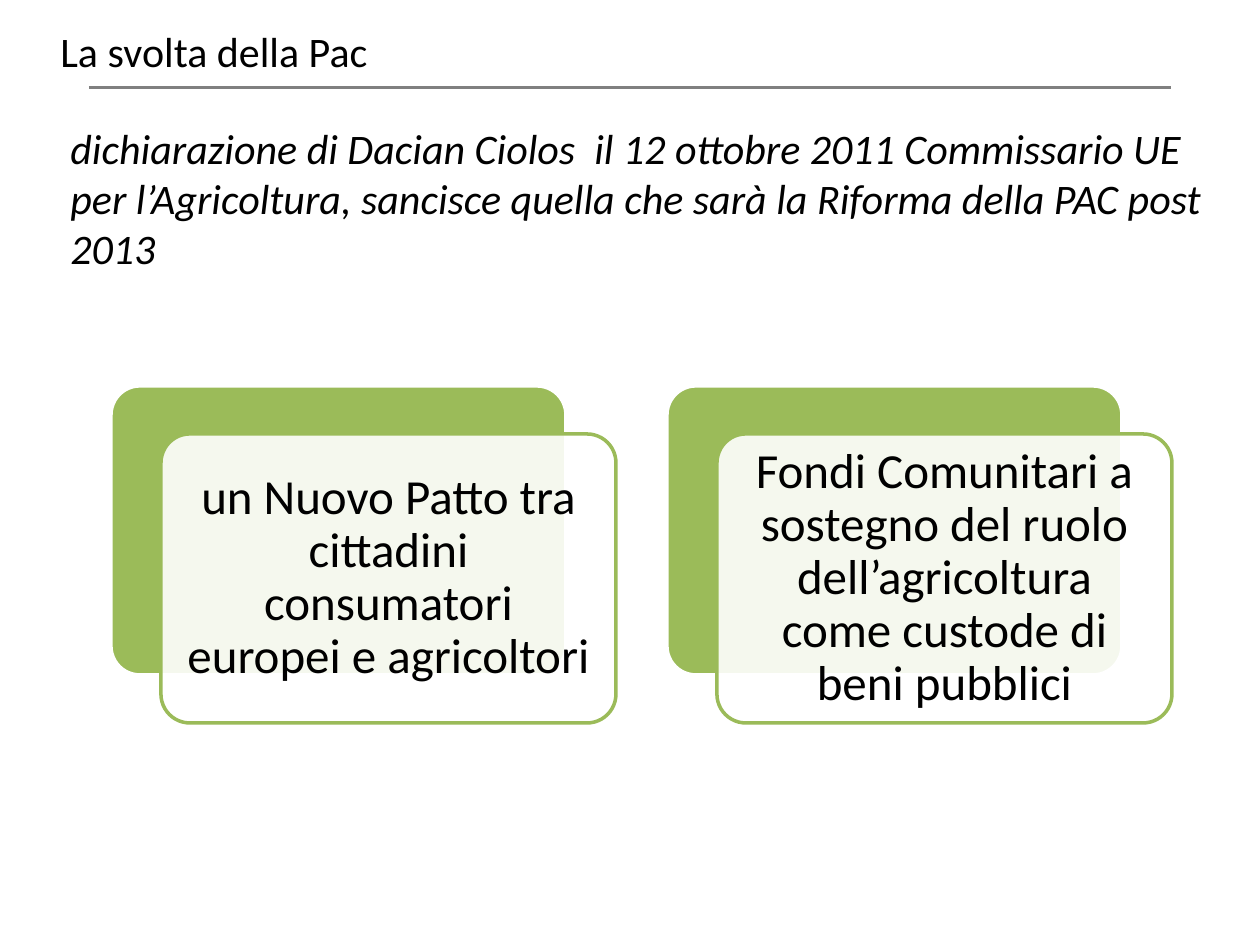
from pptx import Presentation
from pptx import util as u
from pptx.dml.color import RGBColor
from pptx.enum import shapes, text
from pptx.oxml.ns import qn
from lxml import etree

# Content
TITLE = "La svolta della Pac"
INTRO = ("dichiarazione di Dacian Ciolos  il 12 ottobre 2011 Commissario UE "
         "per l’Agricoltura, sancisce quella che sarà la Riforma della PAC post 2013")
CARDS = [
    "un Nuovo Patto tra cittadini consumatori europei e agricoltori",
    "Fondi Comunitari a sostegno del ruolo dell’agricoltura come custode di beni pubblici",
]

# Theme
THEME = {
    "font": "Calibri", "body": 24, "card": 28,
    "ink": RGBColor(0, 0, 0), "rule": RGBColor(0x80, 0x80, 0x80),
    "green": RGBColor(0x9B, 0xBB, 0x59), "white": RGBColor(255, 255, 255),
}

# Layout in px, 126 to the inch
CARD_X, CARD_Y, CARD_W, CARD_H = 111, 386, 455, 289
CARD_STEP, SHIFT_X, SHIFT_Y, CARD_INSET = 556, 50, 48, 15


def px(n):
    return u.Emu(n * u.Inches(1) // 126)


def set_all(obj, values):
    for name, value in values.items():
        setattr(obj, name, value)


def write(tf, words, size, italic=False):
    tf.word_wrap = True
    p = tf.paragraphs[0]
    r = p.add_run()
    r.text = words
    set_all(r.font, {"name": THEME["font"], "size": u.Pt(size), "italic": italic})
    r.font.color.rgb = THEME["ink"]
    return p


def add_text(s, box, words, italic=False):
    tf = s.shapes.add_textbox(*map(px, box)).text_frame
    write(tf, words, THEME["body"], italic)


def add_panel(s, x, y, fill, line):
    sp = s.shapes.add_shape(shapes.MSO_SHAPE.ROUNDED_RECTANGLE,
                            *map(px, (x, y, CARD_W, CARD_H)))
    sp.adjustments[0] = 0.1
    sp.shadow.inherit = False
    sp.fill.solid()
    sp.fill.fore_color.rgb = fill
    sp.line.color.rgb = line
    sp.line.width = u.Pt(2)
    return sp


def add_card(s, x, words):
    add_panel(s, x, CARD_Y, THEME["green"], THEME["white"])
    front = add_panel(s, x + SHIFT_X, CARD_Y + SHIFT_Y, THEME["white"], THEME["green"])
    # Front panel lets a little of the green through
    color = front.fill._xPr.find(qn("a:solidFill"))[0]
    etree.SubElement(color, qn("a:alpha"), val="90000")
    tf = front.text_frame
    sides = ("left", "right", "top", "bottom")
    set_all(tf, {f"margin_{side}": px(CARD_INSET) for side in sides})
    tf.vertical_anchor = text.MSO_ANCHOR.MIDDLE
    p = write(tf, words, THEME["card"])
    set_all(p, {"alignment": text.PP_ALIGN.CENTER, "line_spacing": 0.9})


def main():
    prs = Presentation()
    set_all(prs, {"slide_width": px(1260), "slide_height": px(945)})
    s = prs.slides.add_slide(prs.slide_layouts[6])

    # Rule under the title
    rule = s.shapes.add_connector(shapes.MSO_CONNECTOR.STRAIGHT,
                                  *map(px, (89, 88, 1171, 88)))
    rule.line.color.rgb = THEME["rule"]
    rule.line.width = u.Pt(1.75)
    etree.SubElement(rule._element.spPr, qn("a:effectLst"))

    # Introduction and title
    add_text(s, (58, 116, 1176, 208), INTRO, italic=True)
    add_text(s, (48, 19, 1186, 63), TITLE)

    # Cards
    for i, words in enumerate(CARDS):
        add_card(s, CARD_X + i * CARD_STEP, words)

    prs.save("out.pptx")


if __name__ == "__main__":
    main()
